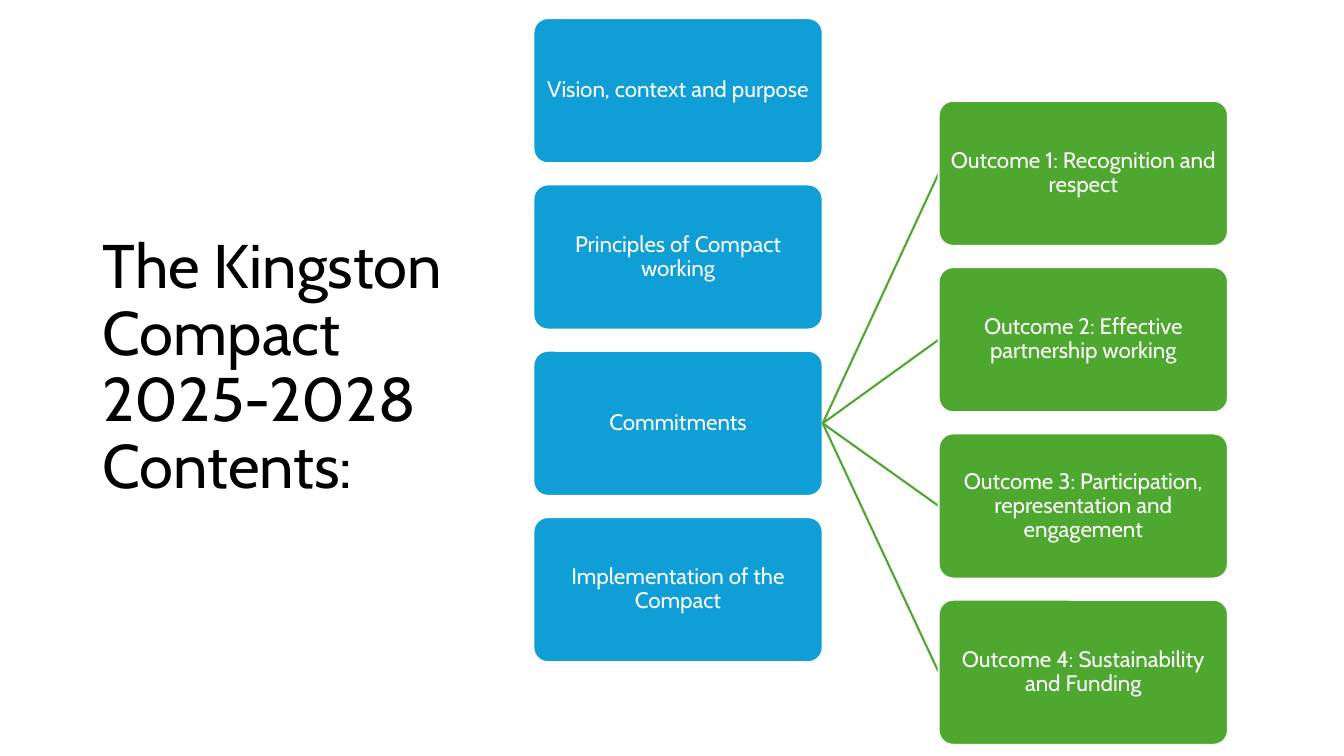
import pptx
import pptx.util
import pptx.dml.color
import pptx.enum.shapes
import pptx.enum.text
import pptx.oxml.ns
import lxml.etree

Inches = pptx.util.Inches
Kinds = pptx.enum.shapes
Align = pptx.enum.text.PP_ALIGN

COLORS = {"blue": "0F9ED5", "green": "4EA72E", "white": "FFFFFF", "black": "000000"}
WIDTH, HEIGHT, STEP = 2.87, 1.44, 1.65


class Canvas:
    font = "Cabin"
    line = 1.5

    def __init__(self, slide):
        self.slide = slide

    def color(self, name):
        return pptx.dml.color.RGBColor.from_string(COLORS[name])

    def stroke(self, line, name):
        line.color.rgb = self.color(name)
        line.width = pptx.util.Pt(self.line)

    def label(self, frame, text, size, color, align, inset):
        margin = Inches(inset)
        values = {
            "word_wrap": True,
            "vertical_anchor": pptx.enum.text.MSO_ANCHOR.MIDDLE,
            "margin_left": margin,
            "margin_right": margin,
            "margin_top": margin,
            "margin_bottom": margin,
        }
        for key, value in values.items():
            setattr(frame, key, value)
        para = frame.paragraphs[0]
        para.text = text
        para.alignment = align
        para.line_spacing = 0.9
        for run in para.runs:
            for key, value in {"name": self.font, "size": pptx.util.Pt(size)}.items():
                setattr(run.font, key, value)
            run.font.color.rgb = self.color(color)

    def title(self, text, left, top, width, height):
        area = map(Inches, (left, top, width, height))
        box = self.slide.shapes.add_textbox(*area)
        self.label(box.text_frame, text, 44, "black", Align.LEFT, 0.1)

    def box(self, text, left, top, fill):
        area = map(Inches, (left, top, WIDTH, HEIGHT))
        shape = self.slide.shapes.add_shape(Kinds.MSO_SHAPE.ROUNDED_RECTANGLE, *area)
        shape.adjustments[0] = 0.1
        shape.shadow.inherit = False
        shape.fill.solid()
        shape.fill.fore_color.rgb = self.color(fill)
        self.stroke(shape.line, "white")
        self.label(shape.text_frame, text, 16, "white", Align.CENTER, 0.05)

    def link(self, *ends):
        link = self.slide.shapes.add_connector(
            Kinds.MSO_CONNECTOR.STRAIGHT, *map(Inches, ends))
        self.stroke(link.line, "green")
        lxml.etree.SubElement(
            link._element.spPr, pptx.oxml.ns.qn("a:effectLst"))


def main():
    deck = pptx.Presentation()
    deck.slide_width = Inches(13.33)
    deck.slide_height = Inches(7.5)
    canvas = Canvas(deck.slides.add_slide(deck.slide_layouts[6]))

    canvas.title("The Kingston Compact 2025-2028\vContents:", 0.92, 0.61, 3.69, 6.09)

    parts = [
        "Vision, context and purpose",
        "Principles of Compact working",
        "Commitments",
        "Implementation of the Compact",
    ]
    goals = [
        "Outcome 1: Recognition and respect",
        "Outcome 2: Effective partnership working",
        "Outcome 3: Participation, representation and engagement",
        "Outcome 4: Sustainability and Funding",
    ]
    left, top = 5.29, 0.18
    for row, text in enumerate(parts):
        canvas.box(text, left, top + row * STEP, "blue")

    start = left + WIDTH
    middle = top + parts.index("Commitments") * STEP + HEIGHT / 2
    right = 9.31
    for row, text in enumerate(goals):
        level = 1 + row * STEP
        canvas.link(start, middle, right, level + HEIGHT / 2)
        canvas.box(text, right, level, "green")

    deck.save("out.pptx")


if __name__ == "__main__":
    main()
